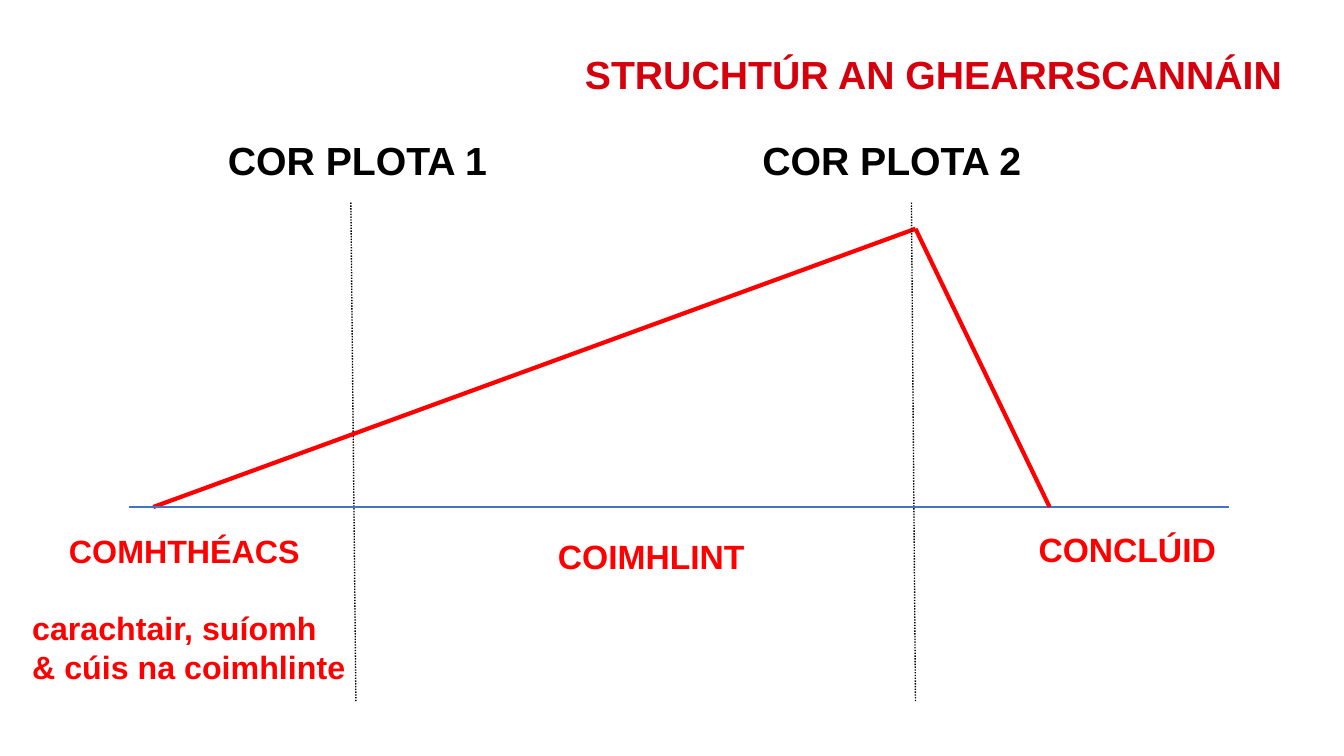
from dataclasses import dataclass

from lxml import etree
from pptx import Presentation
from pptx import util as u
from pptx.dml.color import RGBColor
from pptx.enum import dml, shapes, text
from pptx.oxml.ns import qn
from pptx.slide import Slide

PX = 9144  # 100 px to the inch


@dataclass(frozen=True)
class Theme:
    font: str = "Arial"
    title_red: RGBColor = RGBColor(0xD6, 0x00, 0x0D)
    red: RGBColor = RGBColor(0xFF, 0x00, 0x00)
    black: RGBColor = RGBColor(0x00, 0x00, 0x00)
    blue: RGBColor = RGBColor(0x44, 0x72, 0xC4)
    heading: int = 28
    stage: int = 24
    context: int = 23


THEME = Theme()


@dataclass(frozen=True)
class Label:
    words: str
    left: int
    top: int
    width: int
    height: int
    size: int
    color: RGBColor
    align: text.PP_ALIGN = text.PP_ALIGN.CENTER
    line_spacing: float = 1.0
    details: tuple[str, ...] = ()


@dataclass(frozen=True)
class Line:
    start: tuple[int, int]
    end: tuple[int, int]
    color: RGBColor
    weight: int = 1
    dotted: bool = False


BASELINE_Y = 503
PEAK = (908, 227)

LINES = [
    Line((348, 201), (353, 697), THEME.black, dotted=True),
    Line((152, BASELINE_Y), PEAK, THEME.red, 3),
    Line((904, 201), (908, 697), THEME.black, dotted=True),
    Line((128, BASELINE_Y), (1219, BASELINE_Y), THEME.blue),
    Line(PEAK, (1041, BASELINE_Y), THEME.red, 3),
]

LABELS = [
    Label("STRUCHTÚR AN GHEARRSCANNÁIN", 512, 50, 769, 59, THEME.heading,
          THEME.title_red, text.PP_ALIGN.RIGHT, 0.9),
    Label("COMHTHÉACS ", 22, 522, 331, 165, THEME.context, THEME.red,
          details=("carachtair, suíomh", "& cúis na coimhlinte")),
    Label("COIMHLINT ", 496, 527, 309, 50, THEME.stage, THEME.red),
    Label("CONCLÚID", 955, 520, 326, 50, THEME.stage, THEME.red),
    Label("COR PLOTA 1", 198, 130, 313, 57, THEME.heading, THEME.black),
    Label("COR PLOTA 2", 728, 130, 313, 57, THEME.heading, THEME.black),
]


def draw_line(slide: Slide, line: Line) -> None:
    ends = [value * PX for value in (*line.start, *line.end)]
    connector = slide.shapes.add_connector(shapes.MSO_CONNECTOR.STRAIGHT, *ends)
    connector.line.color.rgb = line.color
    connector.line.width = u.Pt(line.weight)
    if line.dotted:
        connector.line.dash_style = dml.MSO_LINE.ROUND_DOT
    etree.SubElement(connector._element.spPr, qn("a:effectLst"))


def draw_label(slide: Slide, label: Label) -> None:
    """Draw a label, with any details left-aligned one line below it."""
    bounds = (label.left, label.top, label.width, label.height)
    box = slide.shapes.add_textbox(*(value * PX for value in bounds))
    frame = box.text_frame
    frame.word_wrap = True
    frame.text = "\n".join((label.words, *label.details))
    for index, paragraph in enumerate(frame.paragraphs):
        paragraph.alignment = text.PP_ALIGN.LEFT if index else label.align
        paragraph.line_spacing = label.line_spacing
        if index == 1:
            paragraph.space_before = u.Pt(label.size * 1.2)
        paragraph.font.name = THEME.font
        paragraph.font.size = u.Pt(label.size)
        paragraph.font.bold = True
        paragraph.font.color.rgb = label.color


def main() -> None:
    presentation = Presentation()
    presentation.slide_width = 1333 * PX
    presentation.slide_height = 750 * PX
    slide = presentation.slides.add_slide(presentation.slide_layouts[6])
    for line in LINES:
        draw_line(slide, line)
    for label in LABELS:
        draw_label(slide, label)
    presentation.save("out.pptx")


if __name__ == "__main__":
    main()
